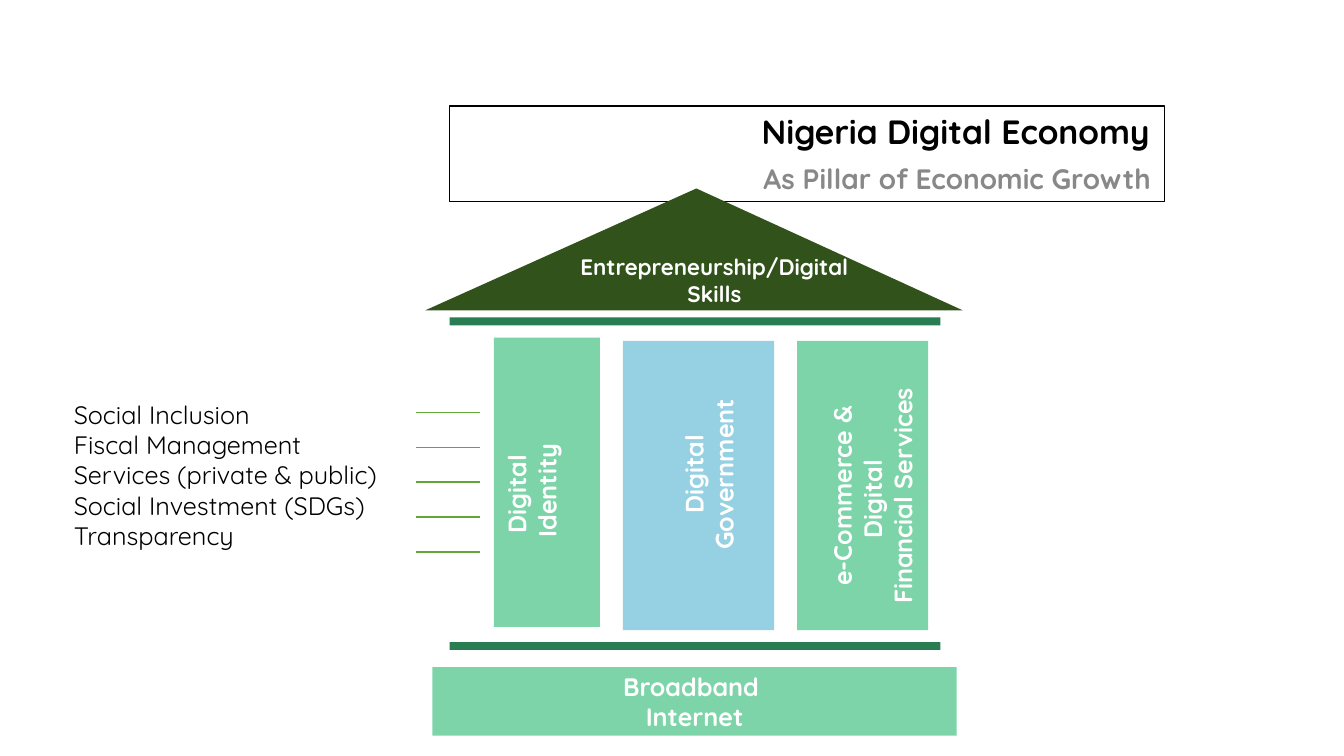
from dataclasses import dataclass

from pptx import Presentation
from pptx.dml.color import RGBColor as Rgb
from pptx.enum.shapes import MSO_CONNECTOR as Link, MSO_SHAPE as Kind
from pptx.enum.text import MSO_ANCHOR as Anchor, MSO_AUTO_SIZE as Fit, PP_ALIGN as Align
from pptx.oxml import parse_xml
from pptx.oxml.ns import nsdecls, qn
from pptx.util import Cm, Pt


@dataclass(frozen=True)
class Theme:
    face: str = "Quicksand"
    ink: str = "000000"
    grey: str = "888888"
    white: str = "FFFFFF"
    mint: str = "7DD4A9"
    sky: str = "95D1E2"
    beam: str = "297D53"
    roof: str = "31531B"
    tick: str = "63A537"
    head: int = 24
    sub: int = 20
    body: int = 18
    small: int = 16


class Page:
    def __init__(self, slide, theme):
        self.slide = slide
        self.shapes = slide.shapes
        self.theme = theme

    def place(self, shape, box):
        for name, value in zip(("left", "top", "width", "height"), box):
            setattr(shape, name, Cm(value))

    def letter(self, shape, lines, color, size, bold=True, align=Align.CENTER,
               anchor=Anchor.MIDDLE):
        """Set the lines as styled paragraphs and return them."""
        frame = shape.text_frame
        look = {"word_wrap": True, "auto_size": Fit.NONE, "vertical_anchor": anchor}
        look |= {f"margin_{side}": Cm(0.13) for side in ("left", "top", "right", "bottom")}
        for name, value in look.items():
            setattr(frame, name, value)
        frame.text = "\n".join(lines)
        for para in frame.paragraphs:
            para.alignment = align
            para.space_before = Pt(0)
            self.style(para, color, size, bold)
        return frame.paragraphs

    def style(self, para, color, size, bold):
        form = {"name": self.theme.face, "size": Pt(size), "bold": bold}
        for run in para.runs:
            for name, value in form.items():
                setattr(run.font, name, value)
            run.font.color.rgb = Rgb.from_string(color)

    def paint(self, shape, color):
        shape.shadow.inherit = False
        shape.fill.solid()
        shape.fill.fore_color.rgb = Rgb.from_string(color)
        shape.line.fill.background()
        return shape

    def title(self, box, head, sub):
        look = self.theme
        shape = self.shapes.title
        self.place(shape, box)
        shape.line.color.rgb = Rgb.from_string(look.ink)
        shape.line.width = Pt(1)
        paras = self.letter(shape, [head, sub], look.ink, look.head,
                            align=Align.RIGHT, anchor=Anchor.TOP)
        paras[1].line_spacing = 0.9
        paras[1].space_before = Pt(10)
        self.style(paras[1], look.grey, look.sub, True)

    def items(self, box, lines):
        """Fill the body placeholder with a list without bullets."""
        shape = self.slide.placeholders[1]
        self.place(shape, box)
        paras = self.letter(shape, lines, self.theme.ink, self.theme.body, bold=False,
                            align=Align.LEFT, anchor=Anchor.TOP)
        for para in paras:
            props = para._p.get_or_add_pPr()
            props.set("marL", "0")
            props.set("indent", "0")
            props.append(parse_xml(f"<a:buNone {nsdecls('a')}/>"))

    def block(self, box, color):
        shape = self.shapes.add_shape(Kind.RECTANGLE, *map(Cm, box))
        return self.paint(shape, color)

    def label(self, box, lines, size, turn=0, anchor=Anchor.TOP):
        shape = self.shapes.add_textbox(*map(Cm, box))
        shape.rotation = turn
        self.letter(shape, lines, self.theme.white, size, anchor=anchor)

    def gable(self, points, color):
        first, *rest = [(Cm(x), Cm(y)) for x, y in points]
        pen = self.shapes.build_freeform(*first)
        pen.add_line_segments(rest, close=True)
        self.paint(pen.convert_to_shape(), color)

    def rule(self, left, right, y):
        line = self.shapes.add_connector(Link.STRAIGHT, Cm(left), Cm(y), Cm(right), Cm(y))
        line.line.color.rgb = Rgb.from_string(self.theme.tick)
        line.line.width = Pt(1)
        props = line._element.find(qn("p:spPr"))
        props.append(parse_xml(f"<a:effectLst {nsdecls('a')}/>"))


def main():
    deck = Presentation()
    deck.slide_width, deck.slide_height = Cm(33.87), Cm(19.05)
    look = Theme()
    page = Page(deck.slides.add_slide(deck.slide_layouts[1]), look)

    page.title((11.33, 2.67, 18.01, 2.41),
               "Nigeria Digital Economy ", "As Pillar of Economic Growth ")
    page.items((1.73, 9.93, 8.76, 4.14),
               ["Social Inclusion", "Fiscal Management", "Services (private & public)",
                "Social Investment (SDGs)", "Transparency"])
    for row in range(5):
        page.rule(10.49, 12.09, 10.39 + 0.88 * row)

    page.gable([(10.72, 7.82), (17.55, 4.75), (24.26, 7.82)], look.roof)
    page.label((14.12, 6.22, 7.77, 1.68), ["Entrepreneurship/Digital Skills"],
               look.small, anchor=Anchor.MIDDLE)
    for top in (8, 16.18):
        page.block((11.33, top, 12.37, 0.2), look.beam)

    pillars = [
        ((12.45, 8.51, 2.67, 7.29), look.mint,
         (10.21, 11.46, 6.38, 1.8), ["Digital ", "Identity"]),
        ((15.7, 8.59, 3.81, 7.29), look.sky,
         (15.16, 11.05, 5.41, 1.8), ["Digital", "Government"]),
        ((20.09, 8.59, 3.3, 7.29), look.mint,
         (18.75, 11.2, 6.5, 2.59), ["e-Commerce & Digital ", "Financial Services"]),
    ]
    for box, color, area, lines in pillars:
        page.block(box, color)
        page.label(area, lines, look.body, turn=270)

    base = page.block((10.9, 16.81, 13.21, 1.73), look.mint)
    page.letter(base, ["Broadband ", "Internet"], look.white, look.body)

    deck.save("out.pptx")


if __name__ == "__main__":
    main()
